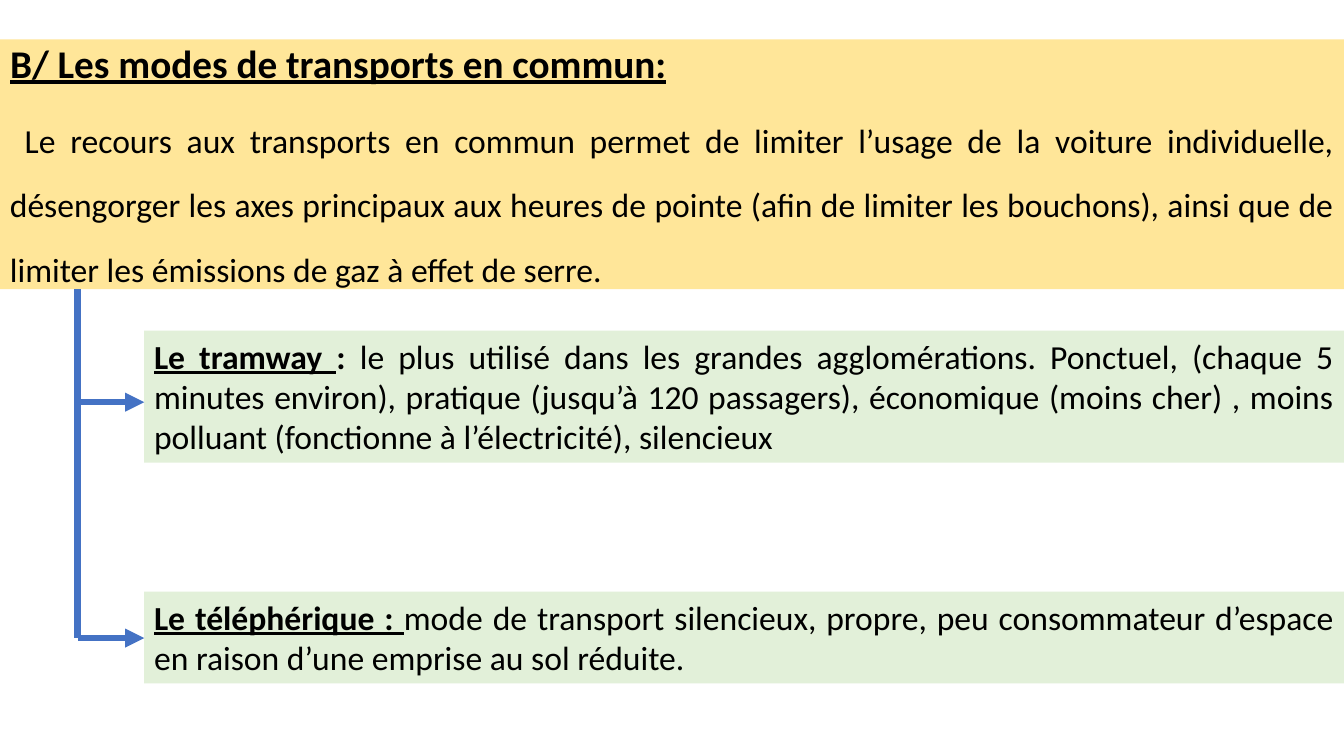
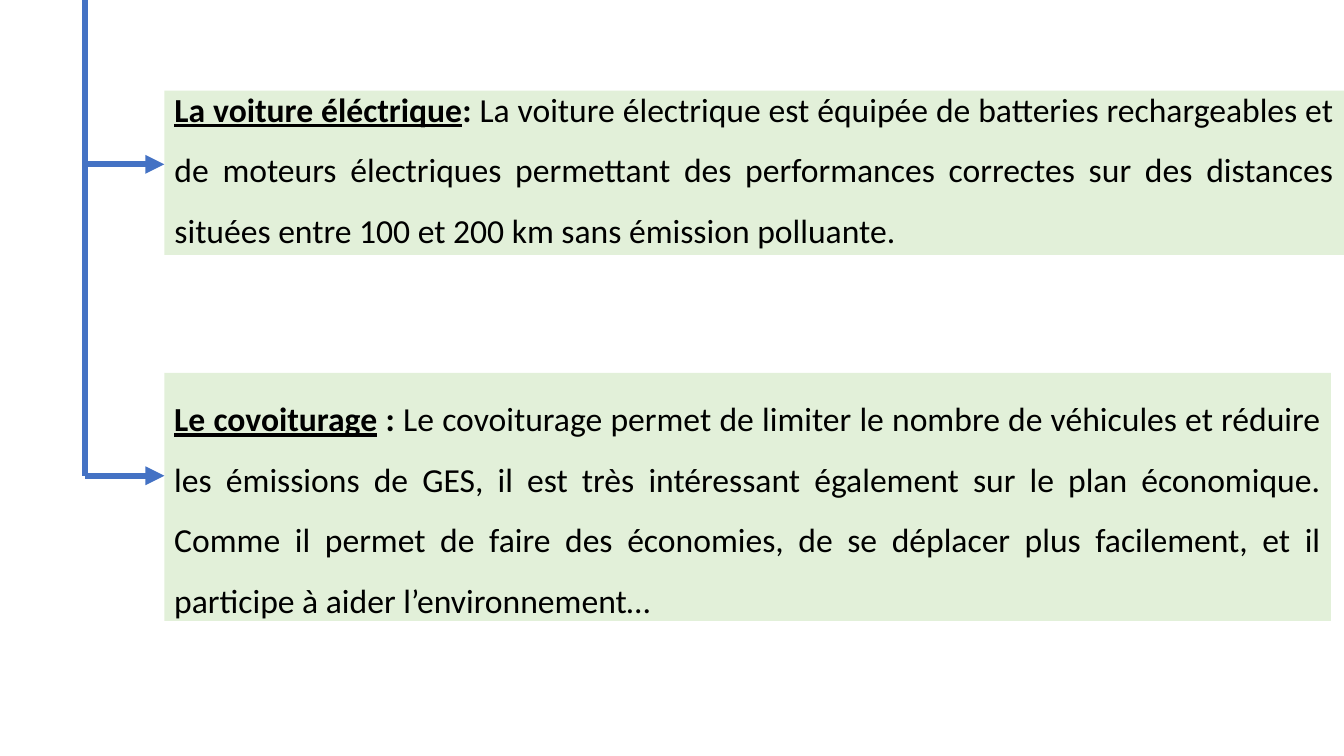
from dataclasses import dataclass

from lxml import etree
from pptx import Presentation
from pptx.dml.color import RGBColor
from pptx.enum.shapes import MSO_CONNECTOR
from pptx.enum.text import MSO_ANCHOR, MSO_AUTO_SIZE, PP_ALIGN
from pptx.oxml.ns import qn
from pptx.shapes.base import BaseShape
from pptx.slide import Slide
from pptx.util import Inches, Pt

STRAIGHT = MSO_CONNECTOR.STRAIGHT
TOP, BOTTOM = MSO_ANCHOR.TOP, MSO_ANCHOR.BOTTOM
JUSTIFY = PP_ALIGN.JUSTIFY
NO_AUTOFIT = MSO_AUTO_SIZE.NONE

# Shared style
FONT = "Calibri"
YELLOW, GREEN, BLUE, BLACK = "FFE699", "E2F0D9", "4472C4", "000000"
SLIDE_WIDTH, SLIDE_HEIGHT = 13.33, 7.5
LINE_WIDTH = 4.5
TITLE_ONLY = 5
PLAIN = {"bold": False, "underline": False}
BOLD = {"bold": True, "underline": False}
UNDERLINED = {"bold": True, "underline": True}


@dataclass
class TextRun:
    text: str
    style: dict


@dataclass
class Panel:
    left: float
    top: float
    width: float
    height: float
    runs: list[TextRun]
    fill: str = GREEN
    size: float = 24
    line_spacing: float = 1.0
    anchor: MSO_ANCHOR = TOP
    is_title: bool = False


@dataclass
class Bracket:
    """A vertical trunk with one arrow to each panel."""
    left: float
    top: float
    right: float
    arrow_tops: list[float]


@dataclass
class SlideContent:
    panels: list[Panel]
    bracket: Bracket


def color(value: str) -> RGBColor:
    return RGBColor.from_string(value)


def set_attributes(target: object, values: dict) -> None:
    for name, value in values.items():
        setattr(target, name, value)


def write_runs(shape: BaseShape, panel: Panel) -> None:
    frame = shape.text_frame
    set_attributes(frame, {"word_wrap": True, "auto_size": NO_AUTOFIT,
                           "vertical_anchor": panel.anchor})
    paragraph = frame.paragraphs[0]
    set_attributes(paragraph, {"alignment": JUSTIFY, "space_before": Pt(0),
                               "line_spacing": panel.line_spacing})
    for item in panel.runs:
        run = paragraph.add_run()
        run.text = item.text
        set_attributes(run.font, {"name": FONT, "size": Pt(panel.size), **item.style})
        run.font.color.rgb = color(BLACK)


def add_panel(slide: Slide, panel: Panel) -> None:
    box = [Inches(value) for value in (panel.left, panel.top, panel.width, panel.height)]
    if panel.is_title:
        shape = slide.shapes.title
        set_attributes(shape, dict(zip(("left", "top", "width", "height"), box)))
    else:
        shape = slide.shapes.add_textbox(*box)
    shape.fill.solid()
    shape.fill.fore_color.rgb = color(panel.fill)
    write_runs(shape, panel)


def add_line(slide: Slide, start: tuple[float, float], end: tuple[float, float],
             arrow: bool = False) -> None:
    points = [Inches(value) for value in (*start, *end)]
    connector = slide.shapes.add_connector(STRAIGHT, *points)
    connector.line.color.rgb = color(BLUE)
    connector.line.width = Pt(LINE_WIDTH)
    if arrow:
        outline = connector.line._get_or_add_ln()
        etree.SubElement(outline, qn("a:tailEnd"), type="triangle")
    # An empty effect list removes the theme shadow
    etree.SubElement(connector._element.spPr, qn("a:effectLst"))


def add_bracket(slide: Slide, bracket: Bracket) -> None:
    add_line(slide, (bracket.left, bracket.top), (bracket.left, bracket.arrow_tops[-1]))
    for top in bracket.arrow_tops:
        add_line(slide, (bracket.left, top), (bracket.right, top), arrow=True)


# Public transport: heading, introduction and two modes
INDENT_1 = 1.43
WIDTH_1 = SLIDE_WIDTH - INDENT_1
PUBLIC_TRANSPORT = SlideContent(
    panels=[
        Panel(0, 0.39, SLIDE_WIDTH, 0.55,
              [TextRun("B/ Les modes de transports en commun:", UNDERLINED)],
              fill=YELLOW, size=28, line_spacing=0.9, is_title=True),
        Panel(0, 0.9, SLIDE_WIDTH, 1.97,
              [TextRun(" Le recours aux transports en commun permet de limiter l’usage de la "
                       "voiture individuelle, désengorger les axes principaux aux heures de "
                       "pointe (afin de limiter les bouchons), ainsi que de limiter les "
                       "émissions de gaz à effet de serre.", PLAIN)],
              fill=YELLOW, line_spacing=1.6),
        Panel(INDENT_1, 3.28, WIDTH_1, 1.31,
              [TextRun("Le tramway ", UNDERLINED), TextRun(": ", BOLD),
               TextRun("le plus utilisé dans les grandes agglomérations. Ponctuel, (chaque 5 "
                       "minutes environ), pratique (jusqu’à 120 passagers), économique (moins "
                       "cher) , moins polluant (fonctionne à l’électricité), silencieux", PLAIN)]),
        Panel(INDENT_1, 5.87, WIDTH_1, 0.91,
              [TextRun("Le téléphérique : ", UNDERLINED),
               TextRun("mode de transport silencieux, propre, peu consommateur d’espace en "
                       "raison d’une emprise au sol réduite.", PLAIN)]),
    ],
    bracket=Bracket(0.77, 2.87, INDENT_1, [3.99, 6.33]),
)

# Car use: electric car and car sharing
INDENT_2 = 1.63
CAR_USE = SlideContent(
    panels=[
        Panel(INDENT_2, 0.9, SLIDE_WIDTH - INDENT_2, 1.63,
              [TextRun("La voiture éléctrique", UNDERLINED), TextRun(": ", BOLD),
               TextRun("La voiture électrique est équipée de batteries rechargeables et de "
                       "moteurs électriques permettant des performances correctes sur des "
                       "distances situées entre 100 et 200 km sans émission polluante.", PLAIN)],
              line_spacing=1.5, anchor=BOTTOM, is_title=True),
        Panel(INDENT_2, 3.7, 11.57, 2.46,
              [TextRun("Le covoiturage", UNDERLINED), TextRun(" :", BOLD),
               TextRun(" Le covoiturage permet de limiter le nombre de véhicules et réduire les "
                       "émissions de GES, il est très intéressant également sur le plan "
                       "économique. Comme il permet de faire des économies, de se déplacer plus "
                       "facilement, et il participe à aider l’environnement…", PLAIN)],
              line_spacing=1.5),
    ],
    bracket=Bracket(0.84, 0, INDENT_2, [1.63, 4.72]),
)


def main() -> None:
    presentation = Presentation()
    set_attributes(presentation, {"slide_width": Inches(SLIDE_WIDTH),
                                  "slide_height": Inches(SLIDE_HEIGHT)})
    for content in (PUBLIC_TRANSPORT, CAR_USE):
        slide = presentation.slides.add_slide(presentation.slide_layouts[TITLE_ONLY])
        for panel in content.panels:
            add_panel(slide, panel)
        add_bracket(slide, content.bracket)
    presentation.save("out.pptx")


if __name__ == "__main__":
    main()
